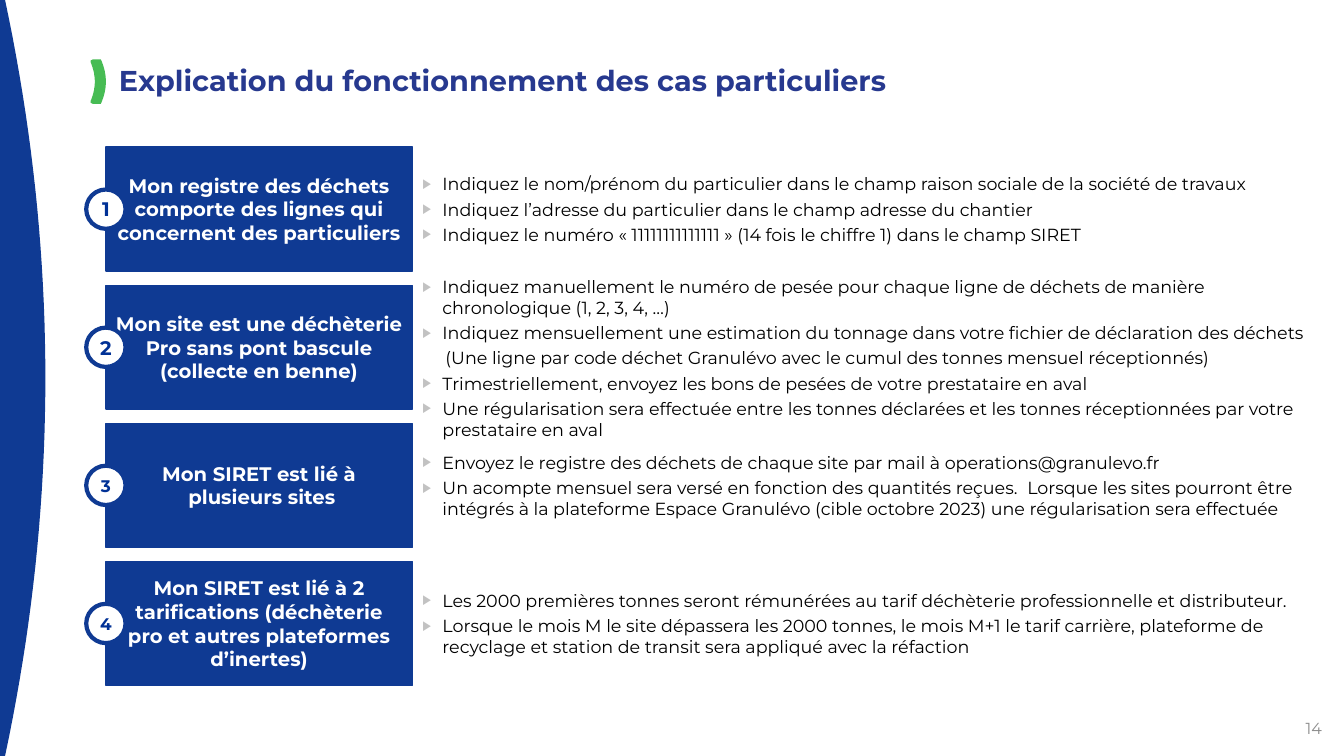
from lxml import etree
from pptx import Presentation
from pptx.dml.color import RGBColor
from pptx.enum.shapes import MSO_SHAPE
from pptx.enum.text import MSO_ANCHOR, PP_ALIGN
from pptx.oxml.ns import qn
from pptx.util import Inches, Pt

PLATE, CIRCLE = MSO_SHAPE.PENTAGON, MSO_SHAPE.OVAL
TOP, MIDDLE = MSO_ANCHOR.TOP, MSO_ANCHOR.MIDDLE
LEFT, CENTER, RIGHT = PP_ALIGN.LEFT, PP_ALIGN.CENTER, PP_ALIGN.RIGHT

COLORS = {"blue": "0F3A93", "title": "27398F", "number": "003196", "green": "47BC54",
          "bullet": "C2C2C2", "page": "8C8C8C", "white": "FFFFFF", "black": "000000"}
COLORS = {name: RGBColor.from_string(value) for name, value in COLORS.items()}
FONT = "Montserrat"

# Grid: one row per case, a label column and an answer column
WIDTH, HEIGHT = 13.33, 7.5
ROW_TOP, ROW_STEP, ROW_H = 1.46, 1.37, 1.23
LABEL_X, LABEL_W = 1.05, 3.04
ANSWER_X, ANSWER_W = LABEL_X + LABEL_W, 9.02
BADGE = 0.39
INDENT = 0.2
UNITS = 1000  # outline units per inch

# Label lines, badge size, answers; an answer starting with "(" has no bullet
CASES = [
    (["Mon registre des déchets comporte des lignes qui concernent des particuliers"], 14,
     ["Indiquez le nom/prénom du particulier dans le champ raison sociale de la société de travaux",
      "Indiquez l’adresse du particulier dans le champ adresse du chantier",
      "Indiquez le numéro « 11111111111111 » (14 fois le chiffre 1) dans le champ SIRET"]),
    (["Mon site est une déchèterie Pro sans pont bascule (collecte en benne)"], 14,
     ["Indiquez manuellement le numéro de pesée pour chaque ligne de déchets de manière "
      "chronologique (1, 2, 3, 4, …)",
      "Indiquez mensuellement une estimation du tonnage dans votre fichier de déclaration "
      "des déchets",
      "(Une ligne par code déchet Granulévo avec le cumul des tonnes mensuel réceptionnés)",
      "Trimestriellement, envoyez les bons de pesées de votre prestataire en aval",
      "Une régularisation sera effectuée entre les tonnes déclarées et les tonnes "
      "réceptionnées par votre prestataire en aval"]),
    (["Mon SIRET est lié à", " plusieurs sites"], 12,
     ["Envoyez le registre des déchets de chaque site par mail à operations@granulevo.fr",
      "Un acompte mensuel sera versé en fonction des quantités reçues.\tLorsque les sites "
      "pourront être intégrés à la plateforme Espace Granulévo (cible octobre 2023) une "
      "régularisation sera effectuée"]),
    (["Mon SIRET est lié à 2 tarifications (déchèterie pro et autres plateformes d’inertes)"], 12,
     ["Les 2000 premières tonnes seront rémunérées au tarif déchèterie professionnelle et "
      "distributeur.",
      "Lorsque le mois M le site dépassera les 2000 tonnes, le mois M+1 le tarif carrière, "
      "plateforme de recyclage et station de transit sera appliqué avec la réfaction"]),
]


def write(s, lines, size, color, bold=False, align=LEFT, anchor=MIDDLE,
          insets=(0.1, 0.05), bullets=False):
    tf = s.text_frame
    tf.word_wrap = True
    tf.vertical_anchor = anchor
    tf.margin_left = tf.margin_right = Inches(insets[0])
    tf.margin_top = tf.margin_bottom = Inches(insets[1])
    for i, line in enumerate(lines):
        p = tf.add_paragraph() if i else tf.paragraphs[0]
        p.alignment = align
        if bullets:
            pPr = p._p.get_or_add_pPr()
            bulleted = not line.startswith("(")
            pPr.set("marL", str(Inches(INDENT if bulleted else INDENT + 0.03)))
            pPr.set("indent", str(Inches(-INDENT if bulleted else 0)))
            if bulleted:
                clr = etree.SubElement(pPr, qn("a:buClr"))
                etree.SubElement(clr, qn("a:srgbClr"), val=str(COLORS["bullet"]))
                etree.SubElement(pPr, qn("a:buSzPct"), val="77000")
                etree.SubElement(pPr, qn("a:buFont"), typeface="Arial")
                etree.SubElement(pPr, qn("a:buChar"), char="▶")
            if i:
                p.space_before = Pt(3)
        r = p.add_run()
        r.text = line
        r.font.name, r.font.size, r.font.bold = FONT, Pt(size), bold
        r.font.color.rgb = COLORS[color]


def bow(x, depth, middle, half, steps=40):
    """Points of a curve bulging right to x at the given middle height."""
    shares = [2 * i / steps - 1 for i in range(steps + 1)]
    return [(x - depth * t * t, middle + half * t) for t in shares]


prs = Presentation()
prs.slide_width, prs.slide_height = Inches(WIDTH), Inches(HEIGHT)
slide = prs.slides.add_slide(prs.slide_layouts[6])
shapes = slide.shapes

# Blue side band and green title mark
band = [(0, 0)] + bow(0.45, 0.4, HEIGHT / 2, HEIGHT / 2) + [(0, HEIGHT)]
mark = (bow(1.05, 0.05, 0.81, 0.22) + [(0.92, 1.03), (0.9, 1.02)]
        + bow(0.94, 0.04, 0.81, 0.19)[::-1] + [(0.9, 0.6), (0.92, 0.59)])
for points, color in ((band, "blue"), (mark, "green")):
    points = [(round(x * UNITS), round(y * UNITS)) for x, y in points]
    builder = shapes.build_freeform(*points[0], scale=Inches(1) / UNITS)
    builder.add_line_segments(points[1:], close=True)
    s = builder.convert_to_shape()
    s.shadow.inherit = False
    s.fill.solid()
    s.fill.fore_color.rgb = COLORS[color]
    s.line.fill.background()

# Title and page number
title = shapes.add_textbox(Inches(1.17), Inches(0.61), Inches(11.81), Inches(0.36))
write(title, ["Explication du fonctionnement des cas particuliers"], 20.5, "title",
      bold=True, insets=(0.01, 0))
page = shapes.add_textbox(Inches(12.67), Inches(7.13), Inches(0.44), Inches(0.19))
write(page, ["14"], 11.4, "page", align=RIGHT, anchor=TOP, insets=(0, 0))

# Cases: label plate, numbered badge, answers
for row, (label, badge_size, answers) in enumerate(CASES):
    top = ROW_TOP + row * ROW_STEP
    badge_x, badge_y = LABEL_X - BADGE / 2, top + (ROW_H - BADGE) / 2
    label_format = dict(size=14, color="white", bold=True, align=CENTER)
    badge_format = dict(size=badge_size, color="number", bold=True, align=CENTER, insets=(0, 0))
    answer_format = dict(size=12.5, color="black", bullets=True)
    parts = [
        (PLATE, LABEL_X, top, LABEL_W, ROW_H, "blue", 1, label, label_format),
        (CIRCLE, badge_x, badge_y, BADGE, BADGE, "white", 3, [str(row + 1)], badge_format)]

    # A long list starts at the foot of the row above
    if len(answers) > 3:
        s = shapes.add_textbox(Inches(ANSWER_X), Inches(top - ROW_STEP + ROW_H),
                               Inches(ANSWER_W), Inches(1.74))
        write(s, answers, anchor=TOP, **answer_format)
    else:
        parts.append((PLATE, ANSWER_X, top, ANSWER_W, ROW_H, None, 0, answers, answer_format))

    for kind, x, y, w, h, fill, line, lines, text_format in parts:
        s = shapes.add_shape(kind, Inches(x), Inches(y), Inches(w), Inches(h))
        if kind == PLATE:
            s.adjustments[0] = 0
        s.shadow.inherit = False
        if fill:
            s.fill.solid()
            s.fill.fore_color.rgb = COLORS[fill]
            s.line.color.rgb = COLORS["blue"]
            s.line.width = Pt(line)
        else:
            s.fill.background()
            s.line.fill.background()
        write(s, lines, **text_format)

prs.save("out.pptx")
